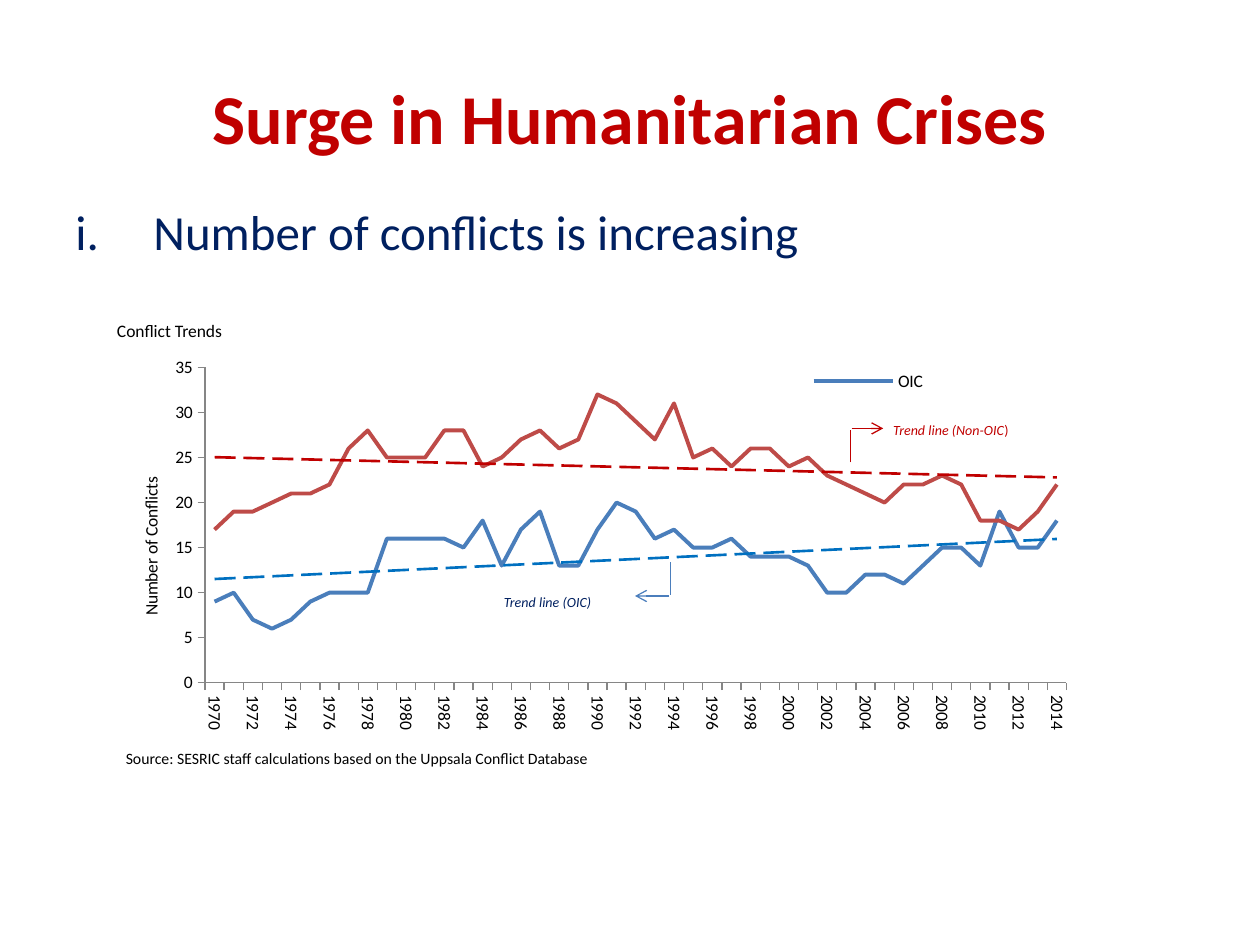
from lxml.etree import SubElement
from pptx import Presentation
from pptx.chart.data import CategoryChartData
from pptx.dml.color import RGBColor
from pptx.enum.chart import XL_CHART_TYPE, XL_LEGEND_POSITION, XL_MARKER_STYLE, XL_TICK_MARK
from pptx.enum.shapes import MSO_CONNECTOR, MSO_SHAPE
from pptx.enum.text import MSO_ANCHOR, PP_ALIGN
from pptx.oxml import parse_xml
from pptx.oxml.ns import nsdecls, qn
from pptx.util import Inches, Pt

THEME = {
    "font": "Calibri",
    "red": "C00000", "navy": "002060", "black": "000000", "white": "FFFFFF",
    "axis": "868686", "arrow": "4B7EBC",
    "title": 40, "body": 28, "chart": 10, "source": 9, "note": 8,
}

TITLE = "Surge in Humanitarian Crises"
POINT = "Number of conflicts is increasing"
# text, box, size, colour
CAPTIONS = [
    ("Conflict Trends", (0.83, 2.49, 4.21, 0.27), "chart", "black"),
    ("Source: SESRIC staff calculations based on the Uppsala Conflict Database",
     (0.9, 5.89, 7.13, 0.37), "source", "black"),
]
# italic text, upright text, box, colour
TREND_NOTES = [
    ("Trend line (Non-OIC", ")", (6.99, 3.3, 1.4, 0.37), "red"),
    ("Trend line (OIC)", "", (3.9, 4.66, 1.21, 0.22), "navy"),
]
# start, end, colour, has arrowhead
POINTERS = [
    ((6.75, 3.67), (6.75, 3.41), "red", False),
    ((6.76, 3.4), (7.01, 3.4), "red", True),
    ((5.32, 4.72), (5.32, 4.46), "arrow", False),
    ((5.31, 4.73), (5.04, 4.73), "arrow", True),
]
YEARS = range(1970, 2015)
# name, line colour, trend colour, values
CONFLICTS = [
    ("OIC", "4A7EBB", "0070C0",
     [9, 10, 7, 6, 7, 9, 10, 10, 10, 16, 16, 16, 16, 15, 18, 13, 17, 19, 13, 13, 17, 20, 19,
      16, 17, 15, 15, 16, 14, 14, 14, 13, 10, 10, 12, 12, 11, 13, 15, 15, 13, 19, 15, 15, 18]),
    ("Non-OIC", "BE4B48", "C00000",
     [17, 19, 19, 20, 21, 21, 22, 26, 28, 25, 25, 25, 28, 28, 24, 25, 27, 28, 26, 27, 32, 31,
      29, 27, 31, 25, 26, 24, 26, 26, 24, 25, 23, 22, 21, 20, 22, 22, 23, 22, 18, 18, 17, 19,
      22]),
]
CHART_BOX = (0.85, 2.76, 7.77, 3.13)
HIDDEN_LEGEND_ENTRIES = (2, 3)


def inches(values):
    return [Inches(value) for value in values]


def rgb(name):
    return RGBColor.from_string(THEME.get(name, name))


def style_font(font, size, color, **flags):
    formats = {"name": THEME["font"], "size": Pt(THEME[size]), **flags}
    for attribute, value in formats.items():
        setattr(font, attribute, value)
    font.color.rgb = rgb(color)


def add_run(paragraph, text, size, color, **flags):
    run = paragraph.add_run()
    run.text = text
    style_font(run.font, size, color, **flags)


def add_text(slide, text, box, size, color):
    frame = slide.shapes.add_textbox(*inches(box)).text_frame
    frame.word_wrap = True
    add_run(frame.paragraphs[0], text, size, color)
    return frame.paragraphs[0]


def number_roman(paragraph, indent):
    properties = paragraph._p.get_or_add_pPr()
    properties.set("marL", str(Inches(indent)))
    properties.set("indent", str(-Inches(indent)))
    SubElement(properties, qn("a:buFont"), typeface="+mj-lt")
    SubElement(properties, qn("a:buAutoNum"), type="romanLcPeriod")


def add_note(slide, italic, upright, box, color):
    note = slide.shapes.add_shape(MSO_SHAPE.RECTANGLE, *inches(box))
    note.shadow.inherit = False
    note.fill.solid()
    note.fill.fore_color.rgb = rgb("white")
    note.line.fill.background()
    frame = note.text_frame
    frame.vertical_anchor = MSO_ANCHOR.TOP
    paragraph = frame.paragraphs[0]
    paragraph.alignment = PP_ALIGN.LEFT
    add_run(paragraph, italic, "note", color, italic=True)
    if upright:
        add_run(paragraph, upright, "note", color, italic=False)


def add_pointer(slide, start, end, color, has_head):
    pointer = slide.shapes.add_connector(MSO_CONNECTOR.STRAIGHT, *inches(start + end))
    pointer.line.color.rgb = rgb(color)
    pointer.line.width = Pt(0.75)
    if has_head:
        SubElement(pointer.line._get_or_add_ln(), qn("a:tailEnd"), type="arrow")
    SubElement(pointer._element.spPr, qn("a:effectLst"))


def place(part, x, y, w=None, h=None, inner=False):
    """Give a chart part a manual layout, in fractions of the chart."""
    for old in part.findall(qn("c:layout")):
        part.remove(old)
    fields = {"layoutTarget": "inner"} if inner else {}
    fields |= {"xMode": "edge", "yMode": "edge", "x": x, "y": y}
    if w:
        fields |= {"w": w, "h": h}
    body = "".join(f'<c:{tag} val="{value}"/>' for tag, value in fields.items())
    layout = parse_xml(f'<c:layout {nsdecls("c")}><c:manualLayout>{body}'
                       "</c:manualLayout></c:layout>")
    overlay = part.find(qn("c:overlay"))
    part.insert(0 if overlay is None else part.index(overlay), layout)


def rotate(part, degrees):
    body = next(part.iter(qn("a:bodyPr")))
    body.set("rot", str(degrees * 60000))
    body.set("vert", "horz")


def add_trend(series, color):
    trend = parse_xml(
        f'<c:trendline {nsdecls("c", "a")}><c:spPr><a:ln w="{Pt(1.5)}"><a:solidFill>'
        f'<a:srgbClr val="{color}"/></a:solidFill><a:prstDash val="lgDash"/></a:ln></c:spPr>'
        '<c:trendlineType val="linear"/><c:dispRSqr val="0"/><c:dispEq val="0"/></c:trendline>')
    series._element.find(qn("c:cat")).addprevious(trend)


def format_axes(chart):
    years, counts = chart.category_axis, chart.value_axis
    for axis in (years, counts):
        formats = {"has_major_gridlines": False, "major_tick_mark": XL_TICK_MARK.OUTSIDE,
                   "minor_tick_mark": XL_TICK_MARK.NONE}
        for attribute, value in formats.items():
            setattr(axis, attribute, value)
        axis.format.line.color.rgb = rgb("axis")
        axis.format.line.width = Pt(0.75)
        style_font(axis.tick_labels.font, "chart", "black")
    rotate(years._element.find(qn("c:txPr")), 90)
    skip = parse_xml(f'<c:tickLblSkip {nsdecls("c")} val="2"/>')
    years._element.find(qn("c:noMultiLvlLbl")).addprevious(skip)

    counts.minimum_scale, counts.maximum_scale, counts.major_unit = 0, 35, 5
    title = counts.axis_title
    add_run(title.text_frame.paragraphs[0], "Number of Conflicts", "chart", "black", bold=False)
    rotate(title._element, -90)
    place(title._element, 0.03, 0.32)


def add_conflict_chart(slide):
    data = CategoryChartData()
    data.categories = [str(year) for year in YEARS]
    for name, _, _, values in CONFLICTS:
        data.add_series(name, values)
    chart = slide.shapes.add_chart(XL_CHART_TYPE.LINE, *inches(CHART_BOX), data).chart
    chart.has_title = False
    style_font(chart.font, "chart", "black")
    chart.plots[0].vary_by_categories = False
    for series, (_, color, trend_color, _) in zip(chart.plots[0].series, CONFLICTS):
        series.smooth = False
        series.marker.style = XL_MARKER_STYLE.NONE
        series.format.line.color.rgb = rgb(color)
        series.format.line.width = Pt(2.25)
        add_trend(series, trend_color)
    format_axes(chart)
    place(chart._chartSpace.chart.plotArea, 0.1, 0.05, 0.88, 0.8, inner=True)

    chart.has_legend = True
    legend = chart.legend
    legend.position = XL_LEGEND_POSITION.TOP
    legend.include_in_layout = False
    place(legend._element, 0.72, 0.04, 0.15, 0.09)
    for index in HIDDEN_LEGEND_ENTRIES:
        entry = parse_xml(f'<c:legendEntry {nsdecls("c")}><c:idx val="{index}"/>'
                          '<c:delete val="1"/></c:legendEntry>')
        legend._element.find(qn("c:layout")).addprevious(entry)


def main():
    deck = Presentation()
    deck.slide_width, deck.slide_height = Inches(10), Inches(7.5)
    slide = deck.slides.add_slide(deck.slide_layouts[5])

    title = slide.shapes.title
    title.left, title.top, title.width, title.height = inches((0.5, 0.3, 9, 1.25))
    title.text_frame.vertical_anchor = MSO_ANCHOR.MIDDLE
    heading = title.text_frame.paragraphs[0]
    heading.alignment = PP_ALIGN.CENTER
    add_run(heading, TITLE, "title", "red", bold=True)

    point = add_text(slide, POINT, (0.5, 1.55, 9, 4.95), "body", "navy")
    point.space_after = Pt(12)
    number_roman(point, 0.62)

    add_conflict_chart(slide)
    for caption in CAPTIONS:
        add_text(slide, *caption)
    for note in TREND_NOTES:
        add_note(slide, *note)
    for pointer in POINTERS:
        add_pointer(slide, *pointer)
    deck.save("out.pptx")


if __name__ == "__main__":
    main()
